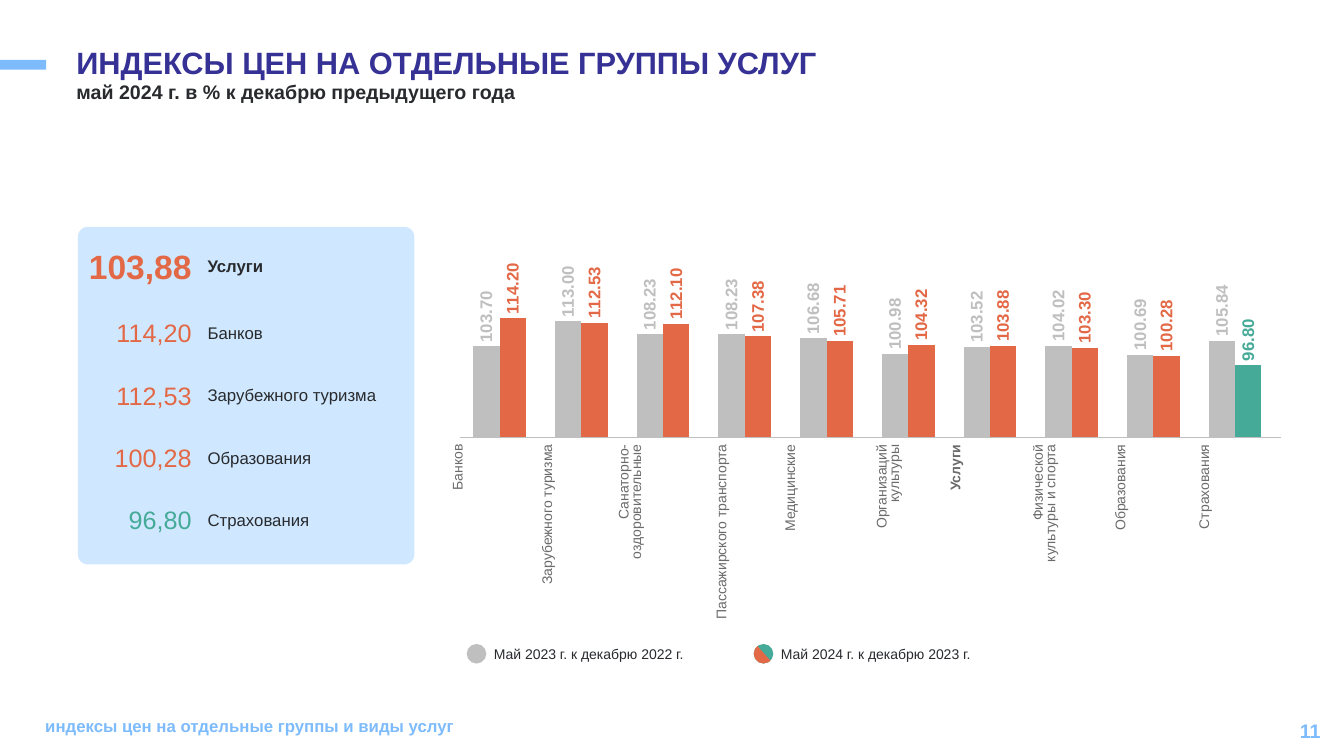
"""Builds the slide on price indices for selected groups of services."""
from lxml.etree import SubElement
from pptx import Presentation
from pptx.chart.data import CategoryChartData
from pptx.dml.color import RGBColor
from pptx.enum.chart import XL_CHART_TYPE, XL_LABEL_POSITION
from pptx.enum.shapes import MSO_CONNECTOR, MSO_SHAPE
from pptx.enum.text import MSO_ANCHOR, PP_ALIGN
from pptx.oxml import parse_xml
from pptx.oxml.ns import nsdecls, qn
from pptx.util import Pt

TITLE = "ИНДЕКСЫ ЦЕН НА ОТДЕЛЬНЫЕ ГРУППЫ УСЛУГ"
SUBTITLE = "май 2024 г. в % к декабрю предыдущего года"
FOOTER = "индексы цен на отдельные группы и виды услуг"
PAGE = "11"
INK, INDIGO, SKY, PALE = "282A2E", "363194", "7DBBFC", "CFE8FF"
GREY, LABEL_GREY, ORANGE, GREEN = "BFBFBF", "6B6B6B", "E36846", "46AA98"

HEADLINE = ("103,88", "Услуги")
HIGHLIGHTS = [
    ("114,20", "Банков", ORANGE),
    ("112,53", "Зарубежного туризма", ORANGE),
    ("100,28", "Образования", ORANGE),
    ("96,80", "Страхования", GREEN),
]
SERVICES = [
    ("Банков", 103.7, 114.2, 64),
    ("Зарубежного туризма", 113, 112.53, 54.7),
    ("Санаторно-оздоровительные", 108.23, 112.1, 69.8),
    ("Пассажирского транспорта", 108.23, 107.38, 49),
    ("Медицинские", 106.68, 105.71, 65.5),
    ("Организаций\nкультуры", 100.98, 104.32, 52.6),
    ("Услуги", 103.52, 103.88, 59),
    ("Физической\nкультуры и спорта", 104.02, 103.3, 59),
    ("Образования", 100.69, 100.28, 59.8),
    ("Страхования", 105.84, 96.8, 59),
]
PERIODS = ["Май 2023 г. к декабрю 2022 г.", "Май 2024 г. к декабрю 2023 г."]

presentation = Presentation()
presentation.slide_width, presentation.slide_height = Pt(960), Pt(540)
slide = presentation.slides.add_slide(presentation.slide_layouts[6])
shapes = slide.shapes


def rgb(code):
    return RGBColor.from_string(code)


def style(font, size, color, bold=False):
    font.name, font.size, font.bold = "Arial", Pt(size), bold
    font.color.rgb = rgb(color)


def add_text(box, text, size, color, bold=False, align=PP_ALIGN.LEFT,
             anchor=MSO_ANCHOR.TOP, spacing=1.0, inset=7.2):
    frame = shapes.add_textbox(*map(Pt, box)).text_frame
    frame.word_wrap, frame.vertical_anchor = True, anchor
    frame.margin_left = frame.margin_right = Pt(inset)
    frame.margin_top = frame.margin_bottom = Pt(inset / 2)
    frame.text = text
    paragraph = frame.paragraphs[0]
    paragraph.alignment, paragraph.line_spacing = align, spacing
    style(paragraph.runs[0].font, size, color, bold)


def add_filled(preset, box, color, adjustments=()):
    shape = shapes.add_shape(preset, *map(Pt, box))
    shape.shadow.inherit = False
    shape.fill.solid()
    shape.fill.fore_color.rgb = rgb(color)
    shape.line.fill.background()
    for index, value in enumerate(adjustments):
        shape.adjustments[index] = value


def add_indicator(middle, number, label, size, color, bold=False):
    add_text((50, middle - 18, 94, 36), number, size, color, bold,
             PP_ALIGN.RIGHT, MSO_ANCHOR.MIDDLE)
    add_text((141.2, middle - 18, 153, 36), label, 12, INK, bold,
             anchor=MSO_ANCHOR.MIDDLE)


def add_index_chart():
    data = CategoryChartData(number_format="0.00")
    data.categories = [str(n + 1) for n in range(len(SERVICES))]
    for column, period in enumerate(PERIODS, 1):
        data.add_series(period, [service[column] for service in SERVICES])
    chart = shapes.add_chart(XL_CHART_TYPE.COLUMN_CLUSTERED, Pt(321.8), Pt(133.2),
                             Pt(593.3), Pt(381.6), data).chart
    style(chart.font, 10, INK)
    chart.has_legend = chart.has_title = False
    chart.category_axis.visible = chart.value_axis.visible = False
    chart.value_axis.has_major_gridlines = False
    chart.value_axis.minimum_scale, chart.value_axis.maximum_scale = 70, 140
    plot = chart.plots[0]
    plot.gap_width, plot.overlap, plot.vary_by_categories = 110, 0, False
    for series, color in zip(plot.series, (GREY, ORANGE)):
        series.format.fill.solid()
        series.format.fill.fore_color.rgb = rgb(color)
        labels = series.data_labels
        labels.show_value, labels.position = True, XL_LABEL_POSITION.OUTSIDE_END
        labels.number_format, labels.number_format_is_linked = "#,##0.00", False
        style(labels.font, 12, color, True)
    decline = plot.series[1].points[len(SERVICES) - 1]
    decline.format.fill.solid()
    decline.format.fill.fore_color.rgb = rgb(GREEN)
    style(decline.data_label.font, 12, GREEN, True)
    decline.data_label.position = XL_LABEL_POSITION.OUTSIDE_END
    for body in chart._chartSpace.xpath(".//c:dLbls//a:bodyPr"):
        body.set("rot", "-5400000")
        body.set("vert", "horz")
    area = chart._chartSpace.chart.plotArea
    for old in area.findall(qn("c:layout")):
        area.remove(old)
    area.insert(0, parse_xml(
        f'<c:layout {nsdecls("c")}><c:manualLayout><c:layoutTarget val="inner"/>'
        '<c:xMode val="edge"/><c:yMode val="edge"/><c:x val="0.01"/><c:y val="0.116"/>'
        '<c:w val="0.984"/><c:h val="0.354"/></c:manualLayout></c:layout>'))


def add_service_names():
    widths = [service[3] for service in SERVICES]
    table = shapes.add_table(1, len(SERVICES), Pt(322.6), Pt(316.8),
                             Pt(sum(widths)), Pt(123.1)).table
    table.first_row = table.horz_banding = False
    for index, (name, _, _, width) in enumerate(SERVICES):
        table.columns[index].width = Pt(width)
        cell = table.cell(0, index)
        cell.fill.background()
        cell.vertical_anchor = MSO_ANCHOR.MIDDLE
        cell.margin_left = cell.margin_right = cell.margin_top = Pt(0.7)
        cell.margin_bottom = 0
        cell._tc.get_or_add_tcPr().set("vert", "vert270")
        cell.text_frame.text = name
        for paragraph in cell.text_frame.paragraphs:
            paragraph.alignment, paragraph.line_spacing = PP_ALIGN.RIGHT, 0.8
            paragraph._p.get_or_add_pPr().set("marL", str(Pt(8.6)))
            style(paragraph.runs[0].font, 10, LABEL_GREY, name == HEADLINE[1])


add_filled(MSO_SHAPE.RECTANGLE, (0, 42.7, 33, 7), SKY)
add_text((734.4, 507.6, 216, 28.8), PAGE, 14, SKY, True, PP_ALIGN.RIGHT, MSO_ANCHOR.MIDDLE)
add_text((47.5, 31, 638.6, 41), TITLE, 22, INDIGO, True, spacing=0.9)
add_text((47.5, 55.4, 638.6, 28.8), SUBTITLE, 14, INK, True, spacing=0.9)
add_text((25.2, 507.6, 805, 28.8), FOOTER, 12, SKY, True)

add_filled(MSO_SHAPE.ROUNDED_RECTANGLE, (55.6, 162, 240.4, 241.2), PALE, [0.03])
add_indicator(190, *HEADLINE, 24, ORANGE, True)
for row, (number, label, color) in enumerate(HIGHLIGHTS):
    add_indicator(237.6 + 44.6 * row, number, label, 18, color)

add_index_chart()
baseline = shapes.add_connector(MSO_CONNECTOR.STRAIGHT, Pt(328.3), Pt(312.5), Pt(915.1), Pt(312.5))
baseline.line.color.rgb, baseline.line.width = rgb(GREY), Pt(1)
SubElement(baseline._element.spPr, qn("a:effectLst"))
add_service_names()

for index, (period, color) in enumerate(zip(PERIODS, (GREY, GREEN))):
    left = 333.4 + 205 * index
    add_filled(MSO_SHAPE.OVAL, (left, 460, 14, 14), color)
    add_text((left + 18.7, 458, 172, 18), period, 10, INK, anchor=MSO_ANCHOR.MIDDLE, inset=0.7)
add_filled(MSO_SHAPE.CHORD, (left, 460, 14, 14), ORANGE, [27, 138.88])

presentation.save("out.pptx")
